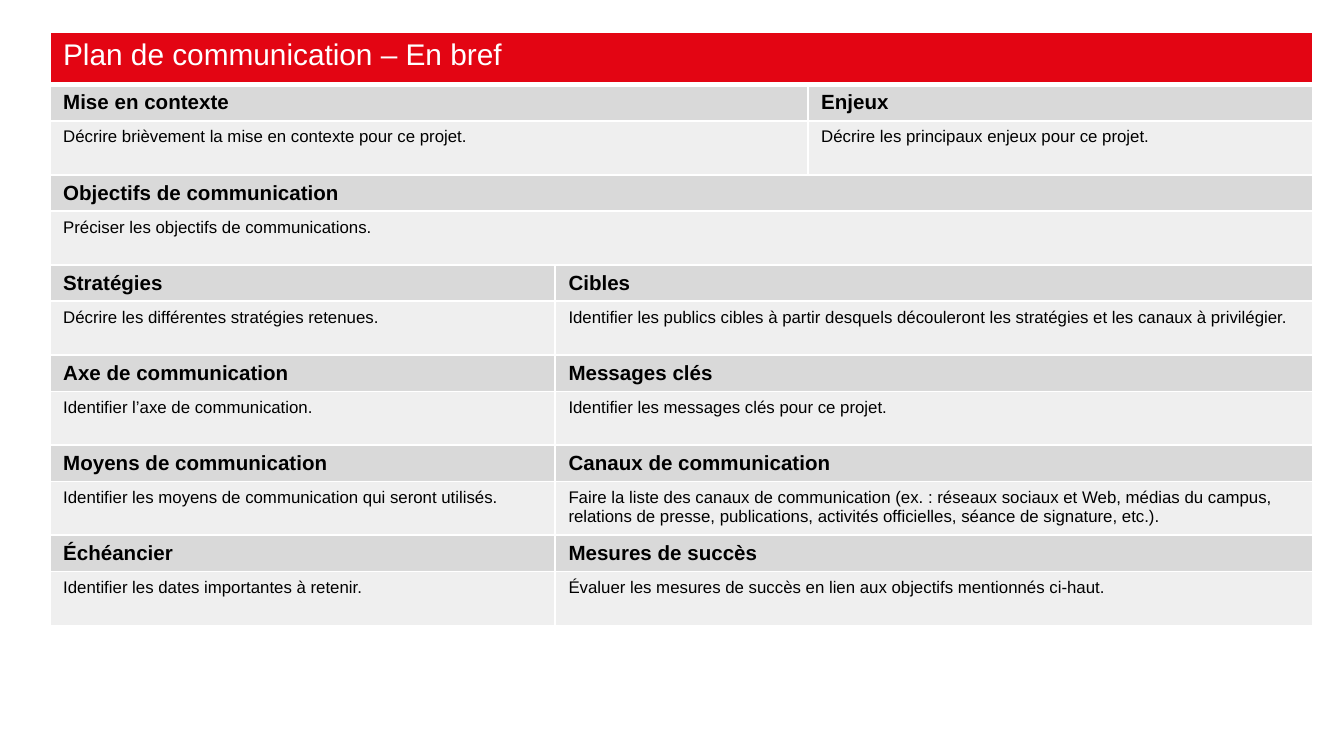
from lxml.etree import SubElement
from pptx import Presentation
from pptx.dml.color import RGBColor
from pptx.oxml.ns import qn
from pptx.util import Inches, Pt

COLUMN_WIDTHS = [3.76, 1.88, 3.76]
TITLE_HEIGHT, HEADING_HEIGHT, BODY_HEIGHT = 0.39, 0.27, 0.4

# Each section lists its blocks: (columns spanned, heading, body)
SECTIONS = [
    [(2, "Mise en contexte", "Décrire brièvement la mise en contexte pour ce projet."),
     (1, "Enjeux", "Décrire les principaux enjeux pour ce projet.")],
    [(3, "Objectifs de communication", "Préciser les objectifs de communications.")],
    [(1, "Stratégies", "Décrire les différentes stratégies retenues."),
     (2, "Cibles", "Identifier les publics cibles à partir desquels découleront "
                   "les stratégies et les canaux à privilégier.")],
    [(1, "Axe de communication", "Identifier l’axe de communication."),
     (2, "Messages clés", "Identifier les messages clés pour ce projet.")],
    [(1, "Moyens de communication",
      "Identifier les moyens de communication qui seront utilisés."),
     (2, "Canaux de communication",
      "Faire la liste des canaux de communication (ex. : réseaux sociaux et Web, "
      "médias du campus, relations de presse, publications, activités officielles, "
      "séance de signature, etc.).")],
    [(1, "Échéancier", "Identifier les dates importantes à retenir."),
     (2, "Mesures de succès",
      "Évaluer les mesures de succès en lien aux objectifs mentionnés ci-haut.")],
]


def color(hex_value):
    return RGBColor.from_string(hex_value)


class PlanSlide:
    font = "Arial"
    white, black = "FFFFFF", "000000"
    red, heading_gray, body_gray = "E30513", "D9D9D9", "EFEFEF"

    def __init__(self, slide):
        self.slide = slide

    def add_table(self, left, top, column_widths, row_heights):
        frame = self.slide.shapes.add_table(
            len(row_heights), len(column_widths), Inches(left), Inches(top),
            Inches(sum(column_widths)), Inches(sum(row_heights)))
        table = frame.table
        table.first_row = table.horz_banding = False
        for column, width in zip(table.columns, column_widths):
            column.width = Inches(width)
        for row, height in zip(table.rows, row_heights):
            row.height = Inches(height)
        return table

    def add_cell(self, table, row, column, span, text, size, fill,
                 text_color=black, bold=False):
        cell = table.cell(row, column)
        if span > 1:
            cell.merge(table.cell(row, column + span - 1))
        for index in range(column, column + span):
            self.style_cell(table.cell(row, index), row, fill)
        run = cell.text_frame.paragraphs[0].add_run()
        run.text = text
        run.font.name = self.font
        run.font.size = Pt(size)
        run.font.bold = bold
        run.font.color.rgb = color(text_color)

    def style_cell(self, cell, row, fill):
        """Draw white borders, thicker between the title and the first section."""
        properties = cell._tc.get_or_add_tcPr()
        widths = {"L": 1, "R": 1, "T": 3 if row == 1 else 1, "B": 3 if row == 0 else 1}
        for side, width in widths.items():
            line = SubElement(properties, qn(f"a:ln{side}"), w=str(Pt(width)))
            solid = SubElement(line, qn("a:solidFill"))
            SubElement(solid, qn("a:srgbClr"), val=self.white)
        cell.fill.solid()
        cell.fill.fore_color.rgb = color(fill)


def main():
    presentation = Presentation()
    presentation.slide_width = Inches(10)
    presentation.slide_height = Inches(10) * 9 // 16
    plan = PlanSlide(presentation.slides.add_slide(presentation.slide_layouts[6]))

    row_heights = [TITLE_HEIGHT] + [HEADING_HEIGHT, BODY_HEIGHT] * len(SECTIONS)
    table = plan.add_table(0.37, 0.24, COLUMN_WIDTHS, row_heights)
    plan.add_cell(table, 0, 0, 3, "Plan de communication – En bref", 16,
                  plan.red, plan.white)
    for number, section in enumerate(SECTIONS):
        row, column = 1 + 2 * number, 0
        for span, heading, body in section:
            plan.add_cell(table, row, column, span, heading, 11,
                          plan.heading_gray, bold=True)
            plan.add_cell(table, row + 1, column, span, body, 9, plan.body_gray)
            column += span

    presentation.save("out.pptx")


if __name__ == "__main__":
    main()
